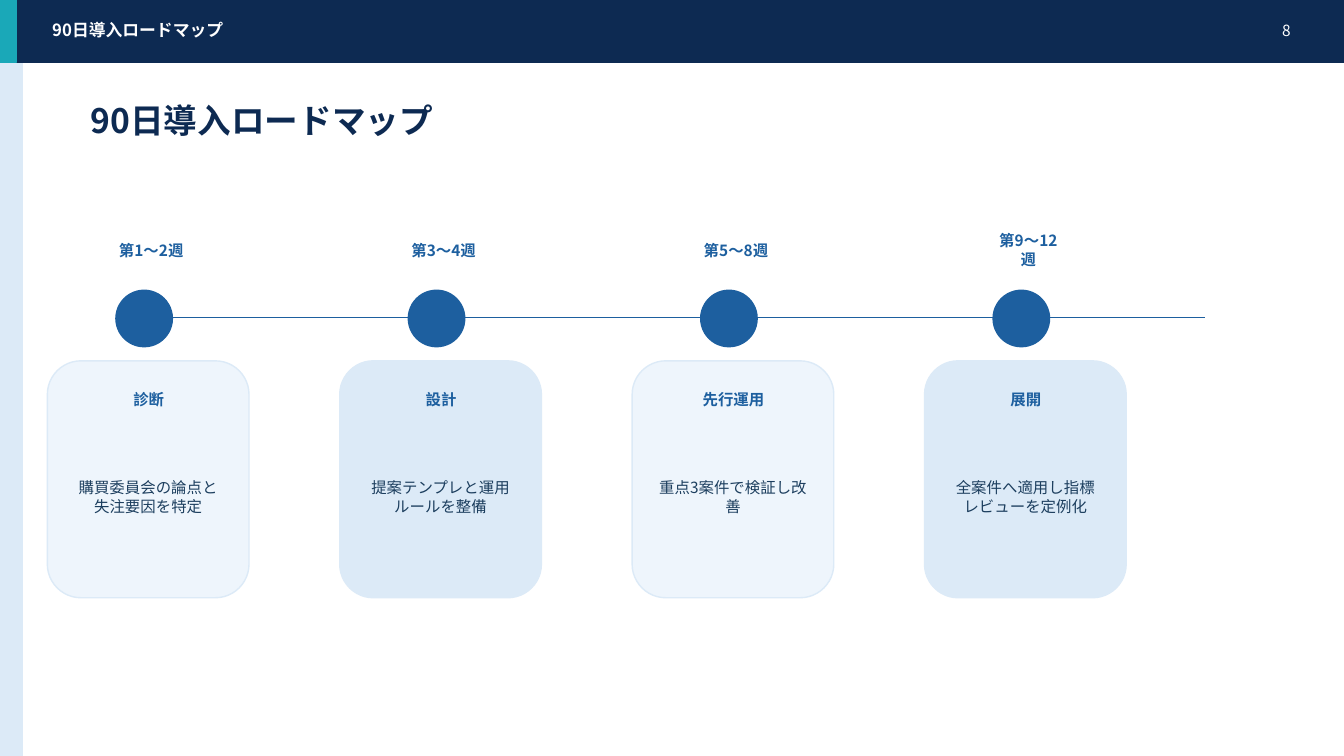
"""Build the 90-day adoption roadmap slide: header, timeline and four phase cards."""
from lxml import etree
from pptx import Presentation
from pptx import util as u
from pptx.dml.color import RGBColor
from pptx.enum import shapes, text
from pptx.oxml.ns import qn

FONT = "Noto Sans CJK JP"
COLORS = {
    "navy": "0D2A52", "teal": "1AA8B8", "blue": "1D5F9F", "ink": "1C3E5E",
    "pale": "DCEAF7", "mist": "EEF5FC", "white": "FFFFFF",
}
SHAPE, ALIGN = shapes.MSO_SHAPE, text.PP_ALIGN
HEADING = "90日導入ロードマップ"
HEADER_HEIGHT = 0.62
FIRST_CARD, PHASE_STEP = 0.47, 2.9
PHASES = [
    ("第1〜2週", "診断", "購買委員会の論点と失注要因を特定"),
    ("第3〜4週", "設計", "提案テンプレと運用ルールを整備"),
    ("第5〜8週", "先行運用", "重点3案件で検証し改善"),
    ("第9〜12週", "展開", "全案件へ適用し指標レビューを定例化"),
]

deck = Presentation()
deck.slide_width, deck.slide_height = u.Inches(13.33), u.Inches(7.5)
slide = deck.slides.add_slide(deck.slide_layouts[5])


def add_block(kind, box, fill, outline):
    block = slide.shapes.add_shape(kind, *map(u.Inches, box))
    block.shadow.inherit = False
    block.fill.solid()
    block.fill.fore_color.rgb = RGBColor.from_string(COLORS[fill])
    block.line.color.rgb = RGBColor.from_string(COLORS[outline])
    block.line.width = u.Pt(1)


def write(box, words, size, color, bold=False, align=ALIGN.LEFT, holder=None):
    holder = holder or slide.shapes.add_textbox(0, 0, 0, 0)
    holder.left, holder.top, holder.width, holder.height = map(u.Inches, box)
    frame = holder.text_frame
    frame.text = words
    frame.word_wrap = True
    frame.auto_size = text.MSO_AUTO_SIZE.NONE
    frame.vertical_anchor = text.MSO_ANCHOR.MIDDLE
    frame.paragraphs[0].alignment = align
    run = frame.paragraphs[0].runs[0]
    run.font.size, run.font.bold, run.font.name = u.Pt(size), bold, FONT
    run.font.color.rgb = RGBColor.from_string(COLORS[color])
    etree.SubElement(run._r.get_or_add_rPr(), qn("a:ea"), typeface=FONT)


for band, color in [
    ((0, 0.55, 0.22, 6.95), "pale"),
    ((0, 0, 13.33, HEADER_HEIGHT), "navy"),
    ((0, 0, 0.16, HEADER_HEIGHT), "teal"),
]:
    add_block(SHAPE.RECTANGLE, band, color, color)

write((0.42, 0.17, 8.8, 0.26), HEADING, 12, "white", bold=True)
write((12.15, 0.17, 0.75, 0.26), "8", 11, "white", align=ALIGN.RIGHT)
write((0.8, 0.95, 11.4, 0.48), HEADING, 24, "navy", bold=True, holder=slide.shapes.title)

timeline = slide.shapes.add_connector(
    shapes.MSO_CONNECTOR.STRAIGHT, *map(u.Inches, (1.35, 3.15, 11.95, 3.15)))
timeline.line.color.rgb = RGBColor.from_string(COLORS["blue"])
timeline.line.width = u.Pt(1)
etree.SubElement(timeline._element.spPr, qn("a:effectLst"))

for index, (weeks, phase, task) in enumerate(PHASES):
    left = FIRST_CARD + index * PHASE_STEP
    card_fill = ("mist", "pale")[index % 2]
    add_block(SHAPE.OVAL, (left + 0.68, 2.88, 0.56, 0.56), "blue", "blue")
    write((left + 0.58, 2.36, 0.9, 0.24), weeks, 11, "blue", True, ALIGN.CENTER)
    add_block(SHAPE.ROUNDED_RECTANGLE, (left, 3.58, 2, 2.35), card_fill, "pale")
    write((left + 0.23, 3.85, 1.55, 0.22), phase, 11, "blue", True, ALIGN.CENTER)
    write((left + 0.14, 4.18, 1.72, 1.5), task, 11, "ink", align=ALIGN.CENTER)

deck.save("out.pptx")
